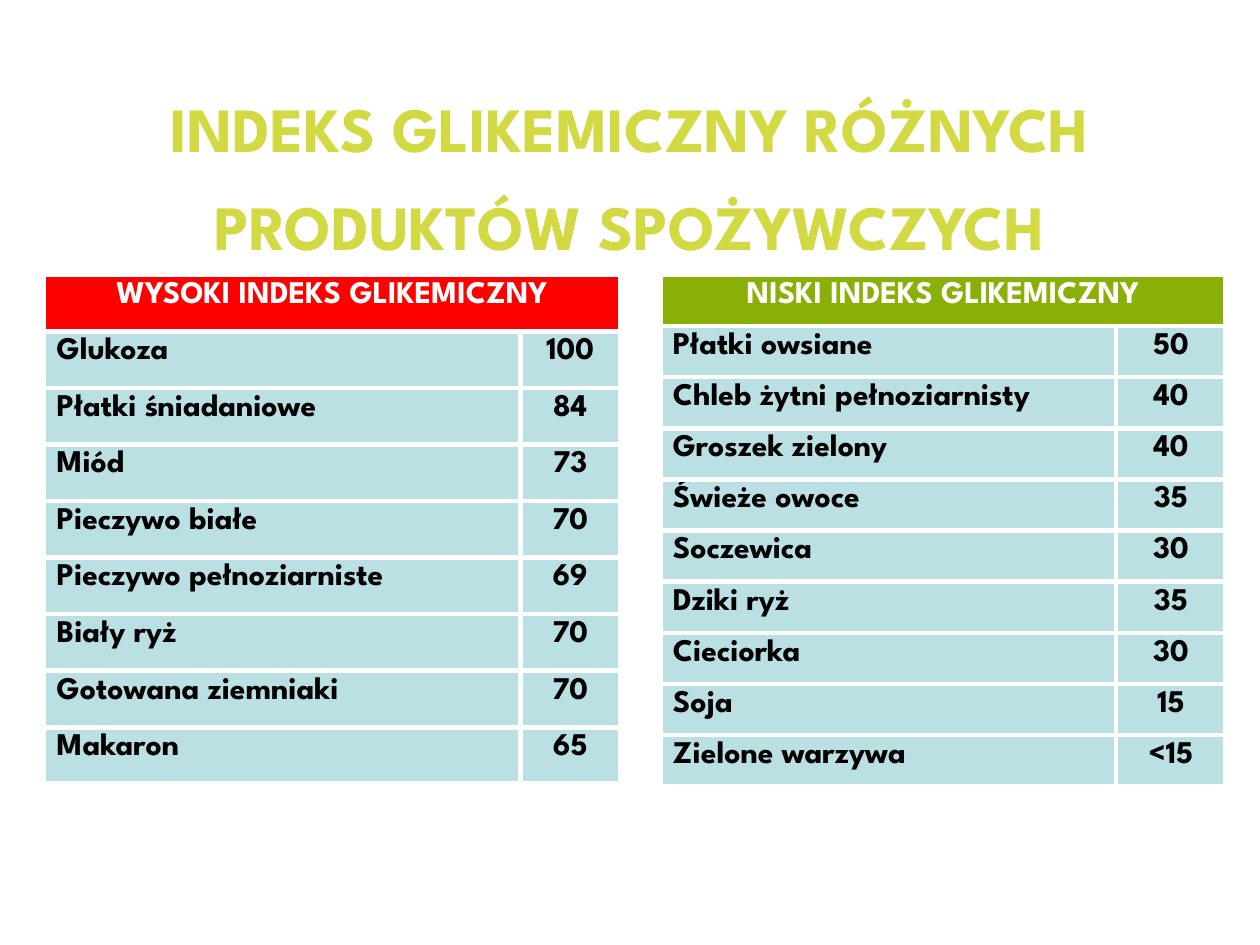
from lxml import etree
from pptx import Presentation
from pptx.dml.color import RGBColor
from pptx.enum.text import MSO_ANCHOR, PP_ALIGN
from pptx.oxml.ns import qn
from pptx.util import Cm, Pt

CENTER, LEFT = PP_ALIGN.CENTER, PP_ALIGN.LEFT
MIDDLE, TOP = MSO_ANCHOR.MIDDLE, MSO_ANCHOR.TOP
FONT = "League Spartan"
LIME = RGBColor(0xD3, 0xD9, 0x43)
RED = RGBColor(0xFF, 0x00, 0x00)
GREEN = RGBColor(0x8A, 0xAF, 0x06)
PALE_BLUE = RGBColor(0xBB, 0xE0, 0xE3)
WHITE = RGBColor(0xFF, 0xFF, 0xFF)
BLACK = RGBColor(0x00, 0x00, 0x00)

HIGH_INDEX = [
    ("Glukoza", "100"),
    ("Płatki śniadaniowe", "84"),
    ("Miód", "73"),
    ("Pieczywo białe", "70"),
    ("Pieczywo pełnoziarniste", "69"),
    ("Biały ryż", "70"),
    ("Gotowana ziemniaki", "70"),
    ("Makaron", "65"),
]
LOW_INDEX = [
    ("Płatki owsiane", "50"),
    ("Chleb żytni pełnoziarnisty", "40"),
    ("Groszek zielony", "40"),
    ("Świeże owoce", "35"),
    ("Soczewica", "30"),
    ("Dziki ryż", "35"),
    ("Cieciorka", "30"),
    ("Soja", "15"),
    ("Zielone warzywa", "<15"),
]


def set_font(p, size, color, align):
    p.alignment = align
    p.font.name = FONT
    p.font.size = Pt(size)
    p.font.bold = True
    p.font.color.rgb = color


def add_borders(cell):
    tc_pr = cell._tc.get_or_add_tcPr()
    for side in ("a:lnL", "a:lnR", "a:lnT", "a:lnB"):
        ln = etree.SubElement(tc_pr, qn(side), w=str(Pt(3)))
        fill = etree.SubElement(ln, qn("a:solidFill"))
        etree.SubElement(fill, qn("a:srgbClr"), val=str(WHITE))


def style_cell(cell, text, fill, color, align):
    add_borders(cell)
    cell.fill.solid()
    cell.fill.fore_color.rgb = fill
    cell.vertical_anchor = TOP
    cell.text = text
    set_font(cell.text_frame.paragraphs[0], 18, color, align)


def add_title(s, left, top, width, height):
    title = s.shapes.title
    title.left, title.top, title.width, title.height = left, top, width, height
    tf = title.text_frame
    tf.word_wrap = True
    tf.vertical_anchor = MIDDLE
    tf.text = " INDEKS GLIKEMICZNY RÓŻNYCH \vPRODUKTÓW SPOŻYWCZYCH"
    p = tf.paragraphs[0]
    p.line_spacing = 1.3
    set_font(p, 36, LIME, CENTER)


def add_index_table(s, left, top, width, height, value_width, heading, color, foods):
    """Table of foods and their index under one merged heading."""
    n_rows = len(foods) + 1
    table = s.shapes.add_table(n_rows, 2, left, top, width, height).table
    table.columns[0].width = width - value_width
    table.columns[1].width = value_width
    for row in table.rows:
        row.height = height // n_rows

    for cell, text in zip(table.rows[0].cells, (heading, "")):
        style_cell(cell, text, color, WHITE, CENTER)
    table.cell(0, 0).merge(table.cell(0, 1))
    for i, (food, value) in enumerate(foods, start=1):
        style_cell(table.cell(i, 0), food, PALE_BLUE, BLACK, LEFT)
        style_cell(table.cell(i, 1), value, PALE_BLUE, BLACK, CENTER)


def main():
    prs = Presentation()
    prs.slide_width, prs.slide_height = Cm(25.4), Cm(19.05)
    s = prs.slides.add_slide(prs.slide_layouts[5])
    add_title(s, Cm(1.27), Cm(1.73), Cm(22.86), Cm(3.18))
    add_index_table(s, Cm(0.89), Cm(5.54), Cm(11.61), Cm(10.26), Cm(2.01),
                    "WYSOKI INDEKS GLIKEMICZNY", RED, HIGH_INDEX)
    add_index_table(s, Cm(13.31), Cm(5.54), Cm(11.4), Cm(10.31), Cm(2.21),
                    "NISKI INDEKS GLIKEMICZNY", GREEN, LOW_INDEX)
    prs.save("out.pptx")


if __name__ == "__main__":
    main()
